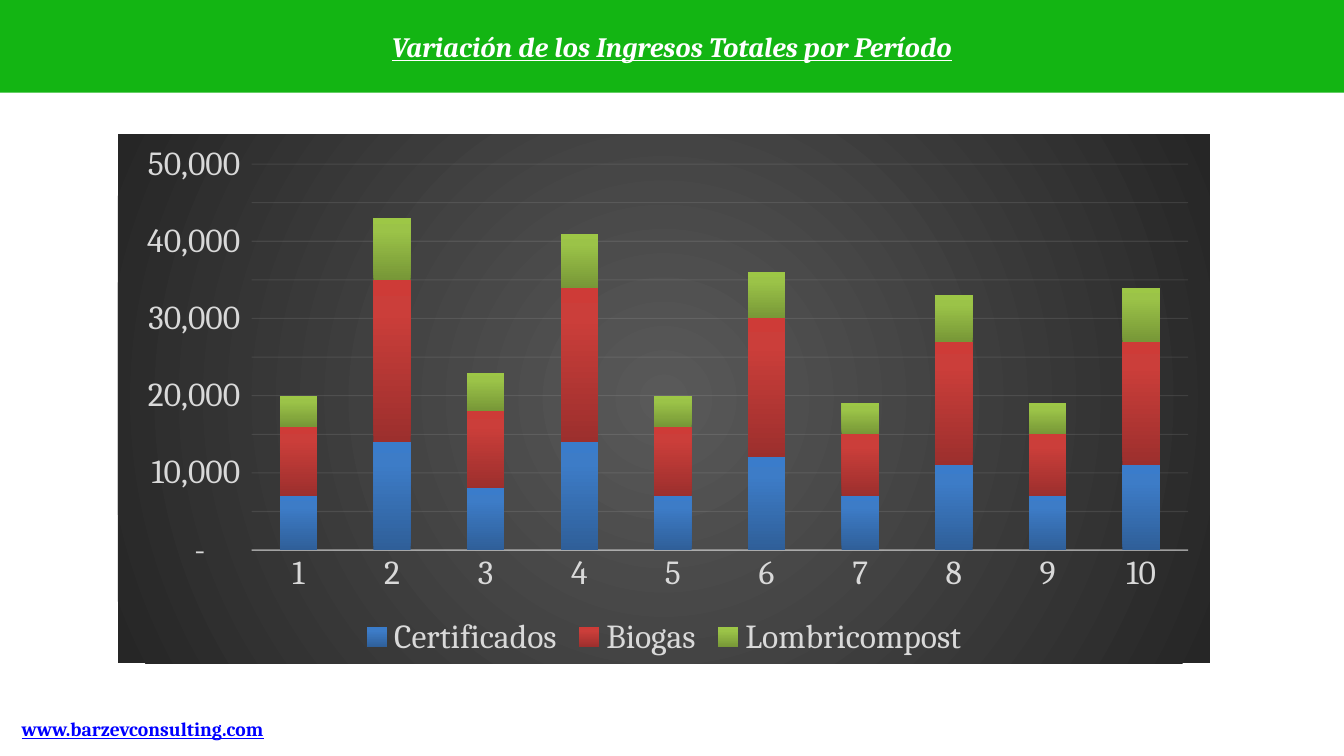
from copy import deepcopy

from pptx import Presentation
from pptx.chart.data import CategoryChartData
from pptx.dml.color import RGBColor
from pptx.enum.chart import XL_CHART_TYPE as ChartType, XL_LEGEND_POSITION as LegendPosition
from pptx.enum.chart import XL_TICK_MARK as TickMark
from pptx.enum.text import MSO_ANCHOR as Anchor, PP_ALIGN as Align
from pptx.oxml import parse_xml
from pptx.oxml.ns import nsdecls, qn
from pptx.util import Inches, Pt

COLORS = {"banner": "13B513", "white": "FFFFFF", "link": "0000FF",
          "labels": "D9D9D9", "lines": "F2F2F2"}
BACKDROP = [(0, "595959"), (100, "262626")]
CIRCLE = '<a:path path="circle"><a:fillToRect l="50000" t="50000" r="50000" b="50000"/></a:path>'
UPWARD = '<a:lin ang="16200000" scaled="0"/>'

# Income in thousands and the gradient of each source
INCOME = {
    "Certificados": ([7, 14, 8, 14, 7, 12, 7, 11, 7, 11],
                     [(0, "2F5F99"), (80, "3D7CC7"), (100, "3A7CCB")]),
    "Biogas": ([9, 21, 10, 20, 9, 18, 8, 16, 8, 16],
               [(0, "9C2F2D"), (80, "CB3E3A"), (100, "CE3B37")]),
    "Lombricompost": ([4, 8, 5, 7, 4, 6, 4, 6, 4, 7],
                      [(0, "779737"), (80, "9BC348"), (100, "9DC746")]),
}


def rgb(name):
    return RGBColor.from_string(COLORS[name])


def gradient(stops, direction):
    """Return a gradFill element from (percent, hex) stops and a direction tag."""
    marks = "".join(f'<a:gs pos="{percent * 1000}"><a:srgbClr val="{color}"/></a:gs>'
                    for percent, color in stops)
    return parse_xml(f'<a:gradFill {nsdecls("a")} rotWithShape="1">'
                     f'<a:gsLst>{marks}</a:gsLst>{direction}</a:gradFill>')


def soft_line(line, width, opacity):
    """Give a line the light line colour at an opacity in percent."""
    line.width = Pt(width)
    line.color.rgb = rgb("lines")
    for color in line._get_or_add_ln().iter(qn("a:srgbClr")):
        color.append(parse_xml(f'<a:alpha {nsdecls("a")} val="{opacity * 1000}"/>'))


class IncomeSlide:
    font_name = "Cambria"

    def __init__(self, deck):
        self.slide = deck.slides.add_slide(deck.slide_layouts[5])

    def style(self, font, size, color):
        font.name, font.size = self.font_name, Pt(size)
        font.color.rgb = rgb(color)

    def fill_text(self, box, text, size, color, background, italic=False):
        box.fill.solid()
        box.fill.fore_color.rgb = rgb(background)
        box.text_frame.word_wrap = True
        box.text_frame.text = text
        paragraph = box.text_frame.paragraphs[0]
        paragraph.alignment = Align.CENTER
        self.style(paragraph.font, size, color)
        paragraph.font.bold = paragraph.font.underline = True
        paragraph.font.italic = italic

    def title(self, text, width, height):
        banner = self.slide.shapes.title
        banner.left = banner.top = 0
        banner.width, banner.height = width, height
        self.fill_text(banner, text, 20, "white", "banner", italic=True)
        banner.text_frame.vertical_anchor = Anchor.MIDDLE

    def web_address(self, text, *place):
        address = self.slide.shapes.add_textbox(*place)
        self.fill_text(address, text, 14, "link", "white")

    def stacked_columns(self, income, *place):
        data = CategoryChartData()
        data.categories = [str(period) for period in range(1, 11)]
        for source, (thousands, _) in income.items():
            data.add_series(source, [value * 1000 for value in thousands])
        chart = self.slide.shapes.add_chart(ChartType.COLUMN_STACKED, *place, data).chart
        chart.has_title = False
        self.style(chart.font, 24, "labels")
        backdrop = parse_xml(f'<c:spPr {nsdecls("c", "a")}><a:ln><a:noFill/></a:ln></c:spPr>')
        backdrop.insert(0, gradient(BACKDROP, CIRCLE))
        chart._chartSpace.find(qn("c:txPr")).addprevious(backdrop)

        plot = chart.plots[0]
        plot.gap_width, plot.overlap = 150, 100
        plot.vary_by_categories = False
        for series, (_, stops) in zip(plot.series, income.values()):
            series.invert_if_negative = False
            series._element.get_or_add_spPr().append(gradient(stops, UPWARD))

        self.axes(chart.category_axis, chart.value_axis)
        chart.has_legend = True
        chart.legend.position = LegendPosition.BOTTOM
        chart.legend.include_in_layout = False
        self.style(chart.legend.font, 24, "labels")

    def axes(self, periods, amounts):
        for axis in (periods, amounts):
            axis.major_tick_mark = axis.minor_tick_mark = TickMark.NONE
            self.style(axis.tick_labels.font, 24, "labels")
        soft_line(periods.format.line, 1, 54)
        amounts.format.line.fill.background()
        amounts.minimum_scale, amounts.maximum_scale = 0, 50000
        amounts.major_unit, amounts.minor_unit = 10000, 5000
        amounts.has_major_gridlines = amounts.has_minor_gridlines = True
        soft_line(amounts.major_gridlines.format.line, 0.75, 10)
        major, minor = (amounts._element.find(qn(f"c:{level}Gridlines"))
                        for level in ("major", "minor"))
        minor.append(deepcopy(major.find(qn("c:spPr"))))
        labels = amounts.tick_labels
        labels.number_format = r'_(* #,##0_);_(* \(#,##0\);_(* "-"??_);_(@_)'
        labels.number_format_is_linked = False


def main():
    deck = Presentation()
    deck.slide_width, deck.slide_height = Inches(13.33), Inches(7.5)
    page = IncomeSlide(deck)
    page.web_address("www.barzevconsulting.com",
                     Inches(0.08), Inches(7.06), Inches(2.67), Inches(0.34))
    page.stacked_columns(INCOME, Inches(1.17), Inches(1.33), Inches(10.83), Inches(5.25))
    page.title("Variación de los Ingresos Totales por Período", deck.slide_width, Inches(0.92))
    deck.save("out.pptx")


if __name__ == "__main__":
    main()
